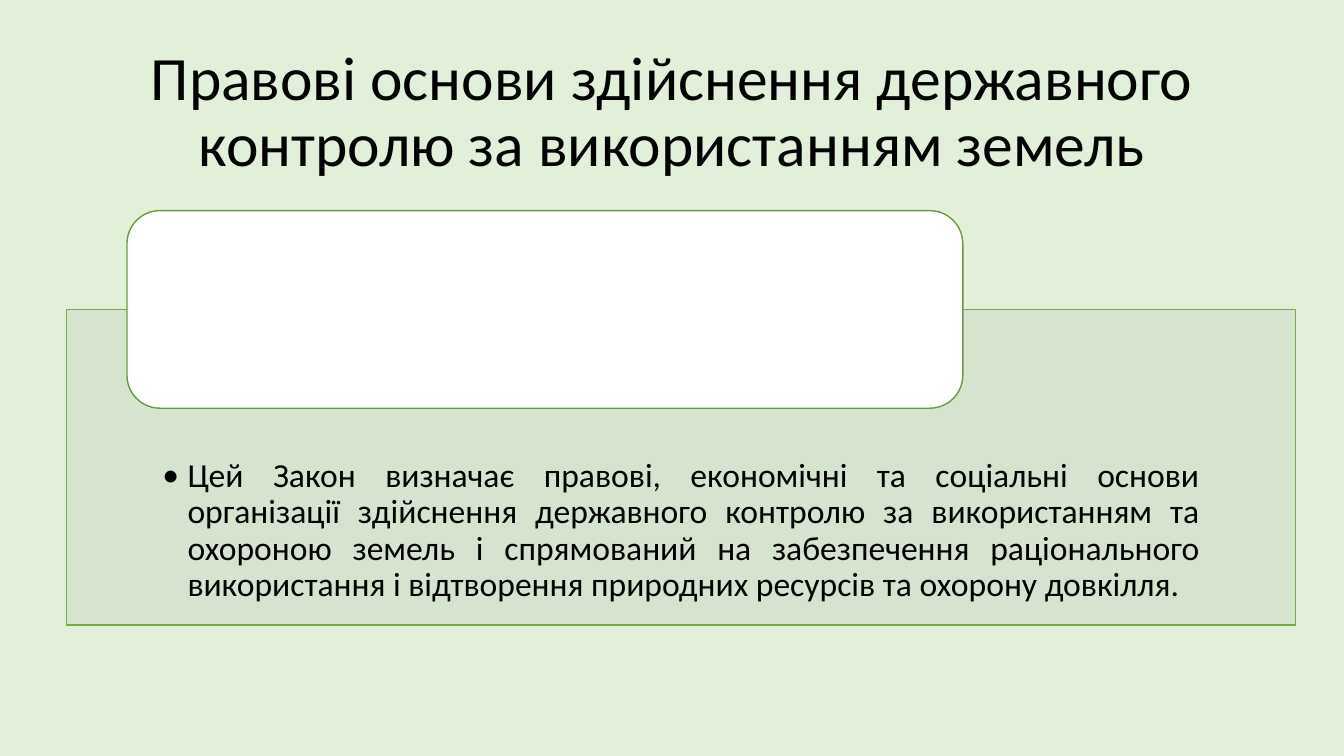
"""Build a slide on the legal basis of state control over land use."""
from dataclasses import dataclass

from lxml import etree
from pptx import Presentation
from pptx.dml.color import RGBColor
from pptx.enum.shapes import MSO_SHAPE
from pptx.enum.text import MSO_ANCHOR, MSO_AUTO_SIZE, PP_ALIGN
from pptx.oxml.ns import qn
from pptx.util import Inches, Pt

ROUNDED = MSO_SHAPE.ROUNDED_RECTANGLE
TOP, MIDDLE = MSO_ANCHOR.TOP, MSO_ANCHOR.MIDDLE
CENTER, JUSTIFY = PP_ALIGN.CENTER, PP_ALIGN.JUSTIFY
NO_AUTOFIT = MSO_AUTO_SIZE.NONE

BACKGROUND = RGBColor(0xE2, 0xF0, 0xD9)
PANEL_FILL = RGBColor(0xD5, 0xE3, 0xCF)
PANEL_LINE = RGBColor(0x70, 0xAD, 0x47)
CARD_LINE = RGBColor(0x66, 0x9D, 0x40)
WHITE = RGBColor(0xFF, 0xFF, 0xFF)
BLACK = RGBColor(0, 0, 0)

FONT = "Calibri"
SLIDE_W, SLIDE_H = Inches(13.33), Inches(7.5)
TITLE = "Правові основи здійснення державного контролю за використанням земель"
LAW = (
    "Цей Закон визначає правові, економічні та соціальні основи організації "
    "здійснення державного контролю за використанням та охороною земель і "
    "спрямований на забезпечення раціонального використання і відтворення "
    "природних ресурсів та охорону довкілля."
)


@dataclass(frozen=True)
class Box:
    """Position and size in percent of the slide."""

    left: float
    top: float
    width: float
    height: float

    def emu(self) -> tuple[int, int, int, int]:
        """Return the box in slide units."""
        return (
            round(SLIDE_W * self.left / 100),
            round(SLIDE_H * self.top / 100),
            round(SLIDE_W * self.width / 100),
            round(SLIDE_H * self.height / 100),
        )


@dataclass(frozen=True)
class Paint:
    """Fill, outline and opacity in percent."""

    fill: RGBColor
    line: RGBColor
    opacity: int = 100


TITLE_BOX = Box(6.9, 5.33, 86.27, 19.33)
PANEL_BOX = Box(4.95, 40.93, 91.45, 41.73)
CARD_BOX = Box(9.45, 27.87, 62.19, 26.13)
PANEL_PAINT = Paint(PANEL_FILL, PANEL_LINE, 90)
CARD_PAINT = Paint(WHITE, CARD_LINE)


def place(sp, box: Box) -> None:
    """Move and size a shape."""
    sp.left, sp.top, sp.width, sp.height = box.emu()


def paint(sp, look: Paint) -> None:
    """Apply fill, opacity and outline."""
    sp.fill.solid()
    sp.fill.fore_color.rgb = look.fill
    sp.line.color.rgb = look.line
    sp.line.width = Pt(1)
    if look.opacity < 100:
        color = sp.fill._xPr.find(qn("a:solidFill")).find(qn("a:srgbClr"))
        etree.SubElement(color, qn("a:alpha"), val=str(look.opacity * 1000))


def write(sp, text: str, size: int, align: PP_ALIGN, anchor: MSO_ANCHOR):
    """Write one paragraph in a placeholder and return it."""
    tf = sp.text_frame
    tf.word_wrap = True
    tf.auto_size = NO_AUTOFIT
    tf.vertical_anchor = anchor
    p = tf.paragraphs[0]
    p.alignment = align
    p.line_spacing = 0.9
    p.space_before = Pt(0)
    r = p.add_run()
    r.text = text
    r.font.name = FONT
    r.font.size = Pt(size)
    r.font.color.rgb = BLACK
    return p


def add_bullet(p, indent: int) -> None:
    """Give a paragraph a hanging round bullet."""
    pPr = p._p.get_or_add_pPr()
    pPr.set("marL", str(indent))
    pPr.set("indent", str(-indent))
    etree.SubElement(pPr, qn("a:buFont"), typeface=FONT)
    etree.SubElement(pPr, qn("a:buChar"), char="•")


def main() -> None:
    """Build and save the slide."""
    prs = Presentation()
    prs.slide_width, prs.slide_height = SLIDE_W, SLIDE_H
    s = prs.slides.add_slide(prs.slide_layouts[1])
    s.background.fill.solid()
    s.background.fill.fore_color.rgb = BACKGROUND

    title, panel = s.shapes.title, s.placeholders[1]
    place(title, TITLE_BOX)
    write(title, TITLE, 44, CENTER, MIDDLE)

    place(panel, PANEL_BOX)
    paint(panel, PANEL_PAINT)
    p = write(panel, LAW, 24, JUSTIFY, TOP)
    p.level = 1
    add_bullet(p, Inches(0.25))
    tf = panel.text_frame
    tf.margin_left = tf.margin_right = Inches(0.95)
    tf.margin_top, tf.margin_bottom = Inches(1.48), Inches(0.19)

    card = s.shapes.add_shape(ROUNDED, *CARD_BOX.emu())
    card.shadow.inherit = False
    paint(card, CARD_PAINT)

    prs.save("out.pptx")


if __name__ == "__main__":
    main()
